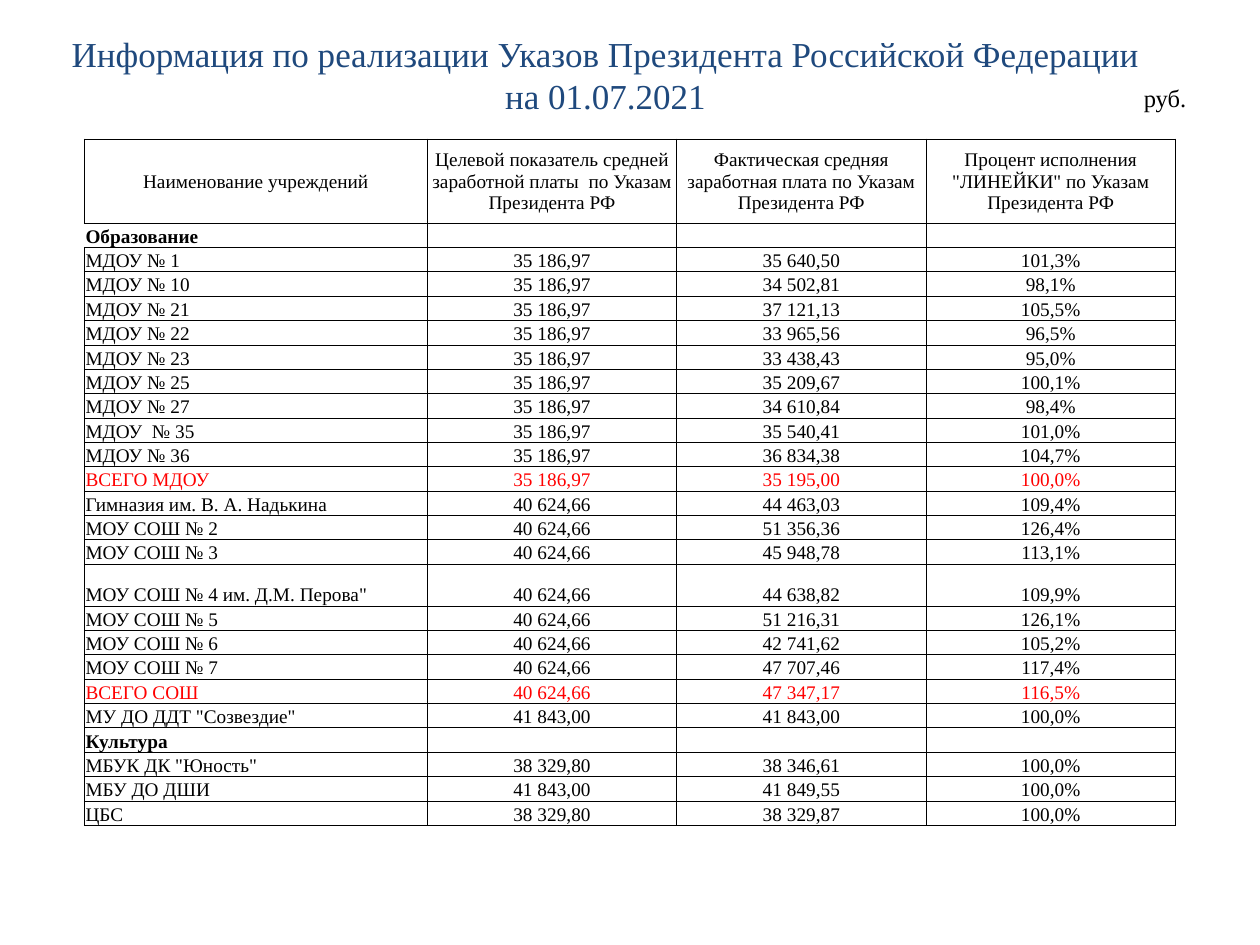
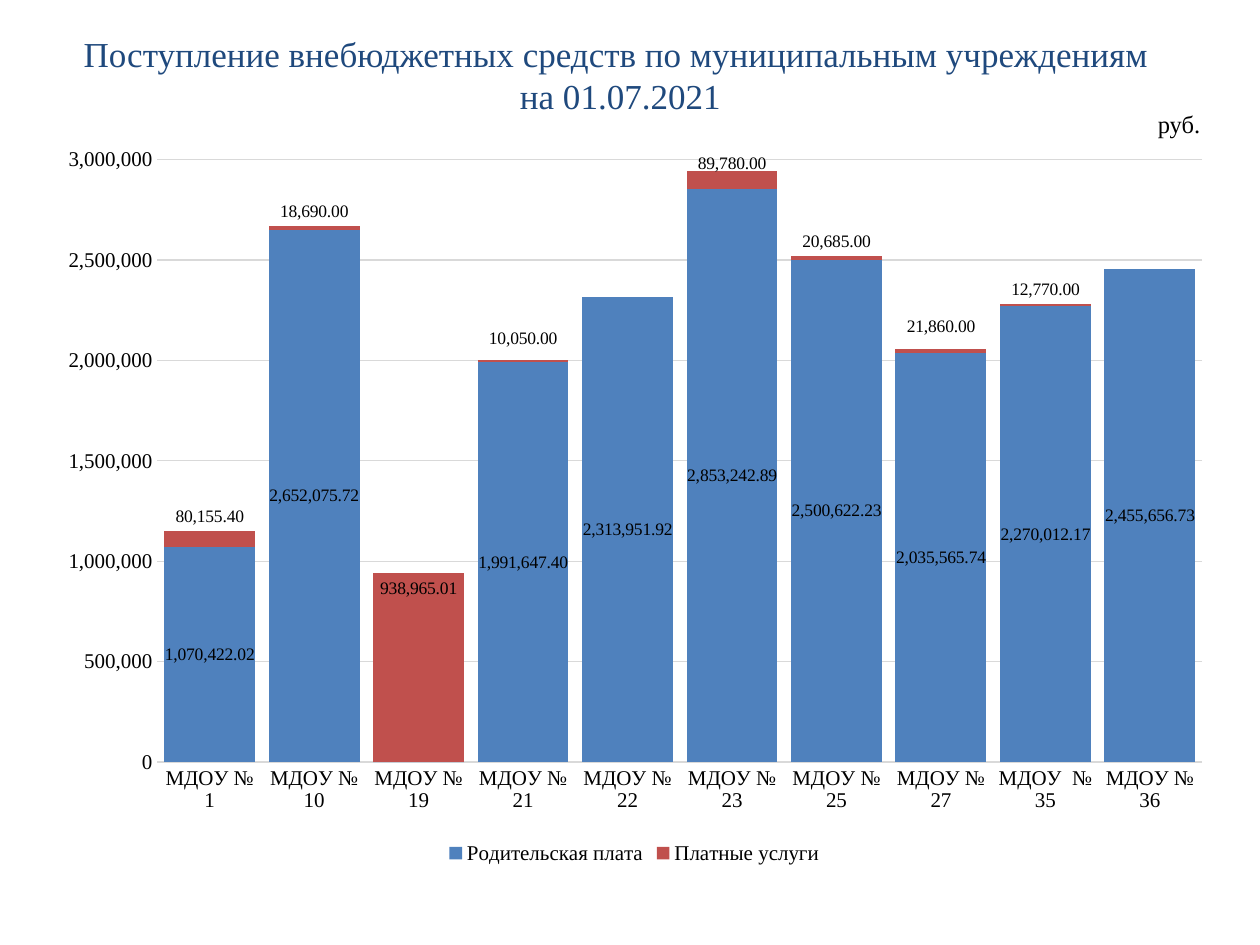
"""Build two slides on salary targets and extra-budgetary income of municipal institutions."""
import copy

import lxml.etree
import pptx
import pptx.chart.data
import pptx.dml.color
import pptx.enum.chart
import pptx.enum.text
import pptx.oxml
import pptx.oxml.ns
import pptx.util

Pt = pptx.util.Pt
qn = pptx.oxml.ns.qn
RGBColor = pptx.dml.color.RGBColor
Align = pptx.enum.text.PP_ALIGN
Anchor = pptx.enum.text.MSO_ANCHOR

FONT = "Times New Roman"
NAVY = RGBColor(0x1F, 0x49, 0x7D)
BLACK = RGBColor(0, 0, 0)
RED = RGBColor(0xFF, 0, 0)
GRID = RGBColor(0xD9, 0xD9, 0xD9)
BLUE = RGBColor(0x4F, 0x81, 0xBD)
BRICK = RGBColor(0xC0, 0x50, 0x4D)

UNIT = "руб."
SALARY_TITLE = ["Информация по реализации Указов Президента Российской Федерации ", "на 01.07.2021 "]
INCOME_TITLE = ["Поступление внебюджетных средств по муниципальным учреждениям ", "на 01.07.2021"]

HEADER = ("Наименование учреждений",
          "Целевой показатель средней заработной платы  по Указам Президента РФ",
          "Фактическая средняя заработная плата по Указам Президента РФ",
          'Процент исполнения "ЛИНЕЙКИ" по Указам Президента РФ')
BLANK = ("",) * 4
SECTIONS = ("Образование", "Культура")
TALL_ROW = 'МОУ СОШ № 4 им. Д.М. Перова"'
ROWS = [
    BLANK,
    HEADER,
    ("Образование", "", "", ""),
    ("МДОУ № 1", "35 186,97", "35 640,50", "101,3%"),
    ("МДОУ № 10", "35 186,97", "34 502,81", "98,1%"),
    ("МДОУ № 21", "35 186,97", "37 121,13", "105,5%"),
    ("МДОУ № 22", "35 186,97", "33 965,56", "96,5%"),
    ("МДОУ № 23", "35 186,97", "33 438,43", "95,0%"),
    ("МДОУ № 25", "35 186,97", "35 209,67", "100,1%"),
    ("МДОУ № 27", "35 186,97", "34 610,84", "98,4%"),
    ("МДОУ  № 35", "35 186,97", "35 540,41", "101,0%"),
    ("МДОУ № 36", "35 186,97", "36 834,38", "104,7%"),
    ("ВСЕГО МДОУ", "35 186,97", "35 195,00", "100,0%"),
    ("Гимназия им. В. А. Надькина", "40 624,66", "44 463,03", "109,4%"),
    ("МОУ СОШ № 2", "40 624,66", "51 356,36", "126,4%"),
    ("МОУ СОШ № 3", "40 624,66", "45 948,78", "113,1%"),
    (TALL_ROW, "40 624,66", "44 638,82", "109,9%"),
    ("МОУ СОШ № 5", "40 624,66", "51 216,31", "126,1%"),
    ("МОУ СОШ № 6", "40 624,66", "42 741,62", "105,2%"),
    ("МОУ СОШ № 7", "40 624,66", "47 707,46", "117,4%"),
    ("ВСЕГО СОШ", "40 624,66", "47 347,17", "116,5%"),
    ('МУ ДО ДДТ "Созвездие"', "41 843,00", "41 843,00", "100,0%"),
    ("Культура", "", "", ""),
    ('МБУК ДК "Юность"', "38 329,80", "38 346,61", "100,0%"),
    ("МБУ ДО ДШИ", "41 843,00", "41 849,55", "100,0%"),
    ("ЦБС", "38 329,80", "38 329,87", "100,0%"),
]
COL_WIDTHS = (196, 142.5, 142.5, 142.5)
ROW_H, HEADER_H, TALL_H = 13.9, 48, 24

INCOME = [
    ("МДОУ № 1", 1070422.02, 80155.4),
    ("МДОУ № 10", 2652075.72, 18690),
    ("МДОУ № 19", 0, 938965.01),
    ("МДОУ № 21", 1991647.4, 10050),
    ("МДОУ № 22", 2313951.92, 0),
    ("МДОУ № 23", 2853242.89, 89780),
    ("МДОУ № 25", 2500622.23, 20685),
    ("МДОУ № 27", 2035565.74, 21860),
    ("МДОУ  № 35", 2270012.17, 12770),
    ("МДОУ № 36", 2455656.73, 0),
]
SERIES = (("Родительская плата", BLUE), ("Платные услуги", BRICK))
LABEL_LIFT = {0: -0.04, 1: -0.04, 3: -0.05, 5: -0.03, 6: -0.04, 7: -0.05, 8: -0.04}


def style(font, size, color=BLACK, bold=False):
    font.name, font.size, font.bold = FONT, Pt(size), bold
    font.color.rgb = color


def add_text(s, box, lines, size, color=BLACK, align=Align.LEFT, wrap=True):
    tf = s.shapes.add_textbox(*map(Pt, box)).text_frame
    tf.word_wrap = wrap
    tf.text = "\n".join(lines)
    for p in tf.paragraphs:
        p.alignment = align
        style(p.runs[0].font, size, color)


def add_heading(prs, title, left, width, unit_left, unit_top):
    s = prs.slides.add_slide(prs.slide_layouts[6])
    add_text(s, (left, 15, width, 55.5), title, 20, NAVY, Align.CENTER)
    add_text(s, (unit_left, unit_top, 40, 24.5), [UNIT], 14, wrap=False)
    return s


def set_borders(cell, sides):
    tc_pr = cell._tc.get_or_add_tcPr()
    for side in "LRTB":
        ln = lxml.etree.SubElement(tc_pr, qn(f"a:ln{side}"), w=str(Pt(0.5)))
        if side in sides:
            fill = lxml.etree.SubElement(ln, qn("a:solidFill"))
            lxml.etree.SubElement(fill, qn("a:srgbClr"), val=str(BLACK))
        else:
            lxml.etree.SubElement(ln, qn("a:noFill"))


def fill_cell(cell, text, row, col):
    name = row[0]
    sides = "B" if row is BLANK else "RTB" if name == SECTIONS[0] and col == 0 else "LRTB"
    set_borders(cell, sides)
    cell.fill.background()
    cell.margin_left = cell.margin_right = cell.margin_top = Pt(0.7)
    cell.margin_bottom = 0
    cell.vertical_anchor = Anchor.MIDDLE if row is HEADER else Anchor.BOTTOM
    p = cell.text_frame.paragraphs[0]
    p.text = text
    p.alignment = Align.CENTER if col or row is HEADER else Align.LEFT
    p._p.get_or_add_endParaRPr().set("sz", "1100")
    for r in p.runs:
        style(r.font, 11, RED if name.startswith("ВСЕГО") else BLACK, name in SECTIONS)


def add_salary_table(s):
    heights = [HEADER_H if row is HEADER else TALL_H if row[0] == TALL_ROW else ROW_H for row in ROWS]
    table = s.shapes.add_table(len(ROWS), len(COL_WIDTHS), Pt(48.2), Pt(65.6),
                               Pt(sum(COL_WIDTHS)), Pt(sum(heights))).table
    table.first_row = table.horz_banding = False
    for column, width in zip(table.columns, COL_WIDTHS):
        column.width = Pt(width)
    for i, row in enumerate(ROWS):
        table.rows[i].height = Pt(heights[i])
        for j, text in enumerate(row):
            fill_cell(table.cell(i, j), text, row, j)


def add_layout(parent, index, **values):
    layout = lxml.etree.Element(qn("c:layout"))
    manual = lxml.etree.SubElement(layout, qn("c:manualLayout"))
    for tag, value in values.items():
        lxml.etree.SubElement(manual, qn(f"c:{tag}"), val=str(value))
    parent.insert(index, layout)


def add_point_labels(labels, values, lifts):
    """Hide the labels of zero values and raise those listed in lifts."""
    parent = labels._element
    shared = [e for e in parent if e.tag != qn("c:showLeaderLines")]
    points = [i for i, v in enumerate(values) if not v or i in lifts]
    for position, i in enumerate(points):
        label = lxml.etree.Element(qn("c:dLbl"))
        lxml.etree.SubElement(label, qn("c:idx"), val=str(i))
        if values[i]:
            add_layout(label, 1, x=0, y=lifts[i])
            label.extend(copy.deepcopy(shared))
        else:
            lxml.etree.SubElement(label, qn("c:delete"), val="1")
        parent.insert(position, label)


def add_income_chart(s):
    enum = pptx.enum.chart
    names, *columns = zip(*INCOME)
    data = pptx.chart.data.CategoryChartData(number_format="#,##0.00")
    data.categories = names
    for (name, _), values in zip(SERIES, columns):
        data.add_series(name, values)
    chart = s.shapes.add_chart(enum.XL_CHART_TYPE.COLUMN_STACKED, Pt(25.2), Pt(77),
                               Pt(674.6), Pt(419.8), data).chart
    chart.has_title = False
    style(chart.font, 10)
    chart.has_legend = True
    chart.legend.position = enum.XL_LEGEND_POSITION.BOTTOM
    chart.legend.include_in_layout = False
    style(chart.legend.font, 12)

    for axis in (chart.category_axis, chart.value_axis):
        axis.major_tick_mark = axis.minor_tick_mark = enum.XL_TICK_MARK.NONE
        style(axis.tick_labels.font, 12)
    axis.minimum_scale, axis.maximum_scale, axis.major_unit = 0, 3000000, 500000
    axis.tick_labels.number_format = "#,##0"
    axis.tick_labels.number_format_is_linked = False
    axis.format.line.fill.background()
    for line in (chart.category_axis.format.line, axis.major_gridlines.format.line):
        line.color.rgb = GRID
        line.width = Pt(0.75)

    plot = chart.plots[0]
    plot.gap_width, plot.overlap, plot.vary_by_categories = 15, 100, False
    positions = (enum.XL_LABEL_POSITION.CENTER, enum.XL_LABEL_POSITION.INSIDE_END)
    for series, (_, color), position, lifts in zip(plot.series, SERIES, positions, ({}, LABEL_LIFT)):
        series.format.fill.solid()
        series.format.fill.fore_color.rgb = color
        labels = series.data_labels
        labels.show_value = True
        labels.number_format, labels.number_format_is_linked = "#,##0.00", False
        labels.position = position
        style(labels.font, 10)
        add_point_labels(labels, series.values, lifts)

    area = chart._chartSpace.chart.plotArea
    for old in area.findall(qn("c:layout")):
        area.remove(old)
    add_layout(area, 0, layoutTarget="inner", xMode="edge", yMode="edge",
               x=0.096, y=0.034, w=0.885, h=0.82)


def main():
    prs = pptx.Presentation()
    prs.slide_width, prs.slide_height = Pt(720), Pt(540)
    add_salary_table(add_heading(prs, SALARY_TITLE, 31, 635, 646.5, 44))
    add_income_chart(add_heading(prs, INCOME_TITLE, 20, 669, 654.5, 58.5))
    prs.save("out.pptx")


if __name__ == "__main__":
    main()
